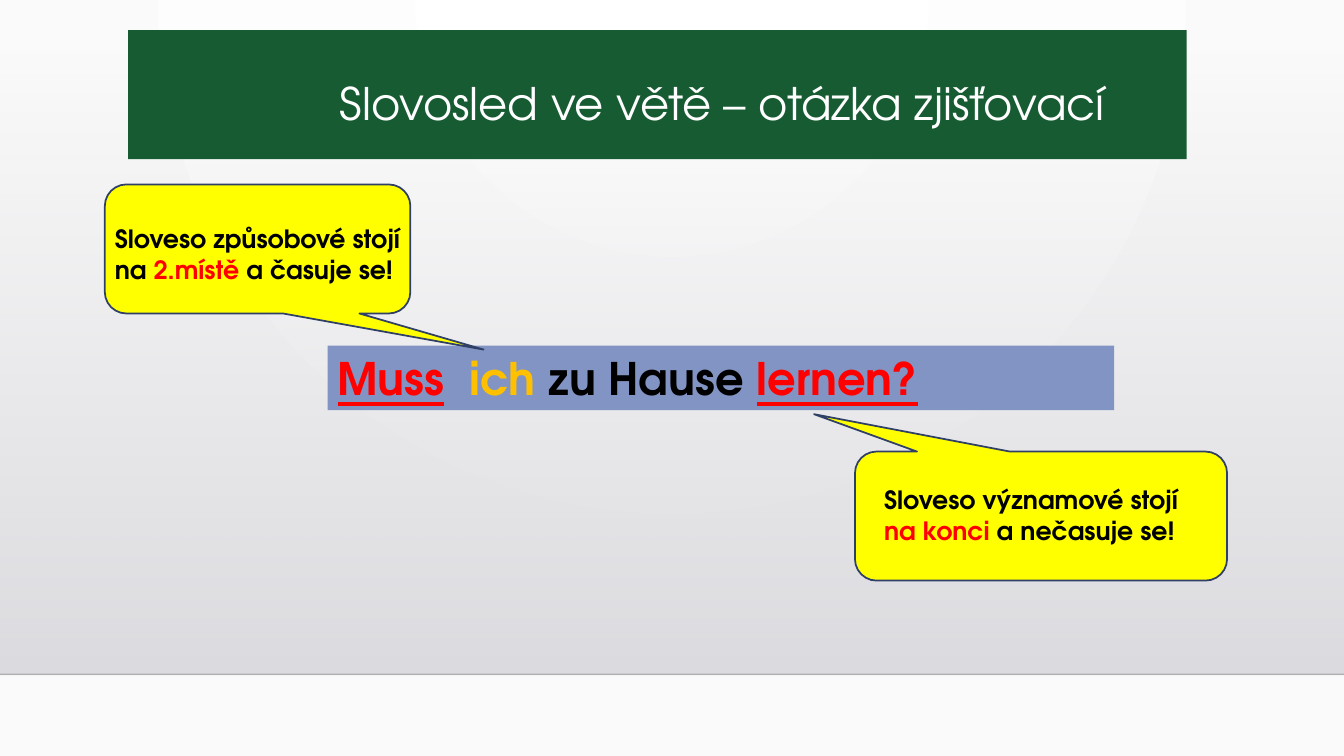
from lxml import etree
from pptx import Presentation
from pptx.dml.color import RGBColor
from pptx.enum.shapes import MSO_CONNECTOR, MSO_SHAPE
from pptx.enum.text import MSO_ANCHOR, MSO_AUTO_SIZE, PP_ALIGN
from pptx.oxml import parse_xml
from pptx.oxml.ns import qn
from pptx.util import Inches, Pt

RECTANGLE = MSO_SHAPE.RECTANGLE
CALLOUT = MSO_SHAPE.ROUNDED_RECTANGULAR_CALLOUT
FONT = "TeX Gyre Adventor"
TITLE_ONLY = 5
DRAWING_NS = "http://schemas.openxmlformats.org/drawingml/2006/main"

COLORS = {
    "black": "000000", "white": "FFFFFF", "red": "FF0000", "amber": "FFC000",
    "yellow": "FFFF00", "green": "165B32", "blue": "8294C3", "outline": "303F65",
    "paper": "FAFAFA", "floor_top": "DCDCE0", "floor_bottom": "DEDEE2",
    "floor_line": "000001",
}


def color(name):
    return RGBColor.from_string(COLORS[name])


def set_gradient(properties, stops, direction):
    """Replace the fill with a gradient; stops are (position, color, alpha)."""
    stop_xml = "".join(
        f'<a:gs pos="{position * 1000}"><a:srgbClr val="{COLORS[name]}">'
        f'<a:alpha val="{alpha * 1000}"/></a:srgbClr></a:gs>'
        for position, name, alpha in stops)
    gradient = parse_xml(f'<a:gradFill xmlns:a="{DRAWING_NS}" rotWithShape="1">'
                         f'<a:gsLst>{stop_xml}</a:gsLst>{direction}</a:gradFill>')
    solid_fill = properties.find(qn("a:solidFill"))
    properties.replace(solid_fill, gradient)


def add_filled_shape(slide, kind, box, fill):
    shape = slide.shapes.add_shape(kind, *map(Inches, box))
    shape.shadow.inherit = False
    shape.fill.solid()
    shape.fill.fore_color.rgb = color(fill)
    shape.line.fill.background()
    return shape


def add_runs(paragraph, runs, size):
    """Write bold runs given as (text, color, underlined)."""
    paragraph.alignment = PP_ALIGN.LEFT
    for text, name, underlined in runs:
        run = paragraph.add_run()
        run.text = text
        run.font.name = FONT
        run.font.size = Pt(size)
        run.font.bold = True
        run.font.underline = underlined
        run.font.color.rgb = color(name)


def add_backdrop(slide, width, top, height):
    # Soft radial light behind everything
    fill = slide.background.fill
    fill.solid()
    fill.fore_color.rgb = color("paper")
    set_gradient(slide.background._cSld.bg.bgPr,
                 [(0, "white", 100), (100, "paper", 100)],
                 '<a:path path="circle"><a:fillToRect l="43000" t="0" '
                 'r="43000" b="100000"/></a:path>')
    # Grey wall fading in downwards
    wall = add_filled_shape(slide, RECTANGLE, (0, top, width, height), "floor_top")
    set_gradient(wall._element.spPr,
                 [(0, "floor_top", 0), (100, "floor_bottom", 100)],
                 '<a:lin ang="5400000" scaled="0"/>')
    # Edge of the floor
    edge_y = Inches(top + height)
    edge = slide.shapes.add_connector(MSO_CONNECTOR.STRAIGHT, 0, edge_y, Inches(width), edge_y)
    edge.line.width = Pt(1)
    edge.line.color.rgb = color("floor_line")
    edge_color = edge.line._ln.find(qn("a:solidFill")).find(qn("a:srgbClr"))
    etree.SubElement(edge_color, qn("a:alpha"), val="20000")
    etree.SubElement(edge._element.spPr, qn("a:effectLst"))


def add_title(slide, text, box):
    title = slide.shapes.title
    title.left, title.top, title.width, title.height = map(Inches, box)
    title.fill.solid()
    title.fill.fore_color.rgb = color("green")
    frame = title.text_frame
    frame.text = text
    frame.word_wrap = True
    frame.auto_size = MSO_AUTO_SIZE.NONE
    frame.vertical_anchor = MSO_ANCHOR.TOP
    frame.margin_left, frame.margin_top = Inches(2.1), Inches(0.51)
    paragraph = frame.paragraphs[0]
    paragraph.alignment = PP_ALIGN.LEFT
    paragraph.line_spacing = 0.9
    font = paragraph.runs[0].font
    font.name, font.size = FONT, Pt(32)
    font.color.rgb = color("white")


def add_sentence(slide, runs, box):
    bar = add_filled_shape(slide, RECTANGLE, box, "blue")
    bar.text_frame.word_wrap = True
    bar.text_frame.vertical_anchor = MSO_ANCHOR.TOP
    add_runs(bar.text_frame.paragraphs[0], runs, 32)


def add_callout(slide, runs, box, tip, text_offset):
    """Place a bubble with its tip and text relative to the box."""
    left, top, _, _ = box
    bubble = add_filled_shape(slide, CALLOUT, box, "yellow")
    bubble.line.color.rgb = color("outline")
    bubble.line.width = Pt(1.25)
    bubble.adjustments[0], bubble.adjustments[1] = tip
    offset_x, offset_y = text_offset
    label = slide.shapes.add_textbox(Inches(left + offset_x), Inches(top + offset_y),
                                     Inches(3.32), Inches(0.71))
    label.text_frame.word_wrap = True
    add_runs(label.text_frame.paragraphs[0], runs, 18)


def main():
    presentation = Presentation()
    presentation.slide_width = Inches(13.33)
    presentation.slide_height = Inches(7.5)
    slide = presentation.slides.add_slide(presentation.slide_layouts[TITLE_ONLY])

    add_backdrop(slide, 13.33, 0.51, 6.18)
    # Bring the title in front of the backdrop
    slide.shapes._spTree.append(slide.shapes.title._element)
    add_title(slide, "Slovosled ve větě – otázka zjišťovací", (1.27, 0.3, 10.5, 1.28))
    add_sentence(slide, [
        ("Muss", "red", True), ("  ", "black", False), ("ich ", "amber", False),
        ("zu Hause ", "black", False), ("lernen?", "red", True),
    ], (3.25, 3.43, 7.8, 0.64))

    # Rule for the main verb, then rule for the modal verb
    add_callout(slide, [
        ("Sloveso významové stojí ", "black", False),
        ("na konci ", "red", False), ("a nečasuje se!", "black", False),
    ], (8.48, 4.48, 3.69, 1.28), (-0.61, -0.79), (0.19, 0.28))
    add_callout(slide, [
        ("Sloveso způsobové stojí na ", "black", False),
        ("2.místě ", "red", False), ("a časuje se!", "black", False),
    ], (1.04, 1.83, 3.03, 1.28), (0.74, 0.78), (0, 0.34))

    presentation.save("out.pptx")


if __name__ == "__main__":
    main()
